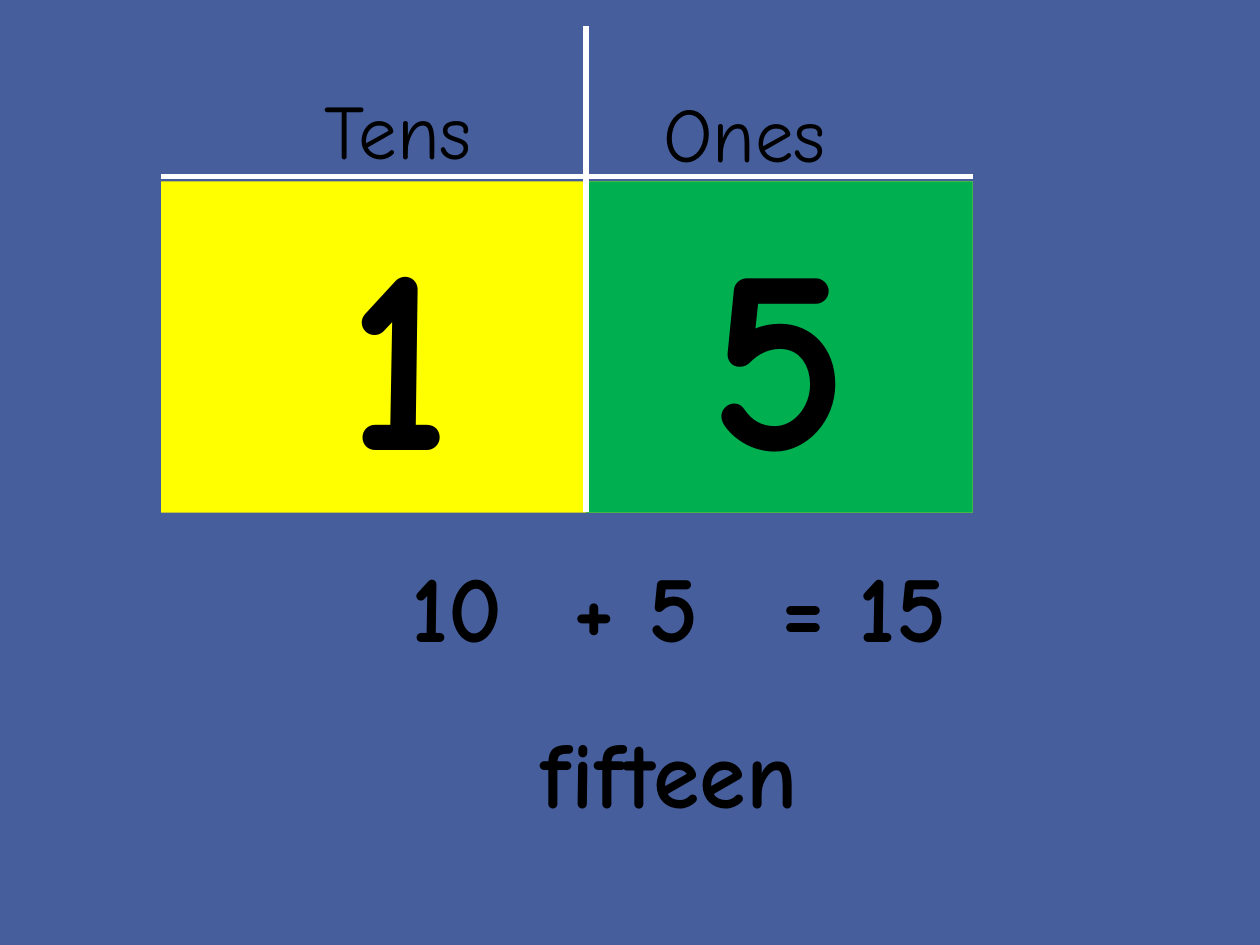
from lxml.etree import SubElement
from pptx import Presentation
from pptx.dml.color import RGBColor
from pptx.enum.shapes import MSO_CONNECTOR, MSO_SHAPE
from pptx.enum.text import MSO_ANCHOR, PP_ALIGN
from pptx.oxml.ns import qn
from pptx.util import Inches, Pt

COLORS = {"background": "465E9C", "tens": "FFFF00", "ones": "00B050",
          "line": "FFFFFF", "text": "000000"}
FONT = "Comic Neue"


def color(name):
    return RGBColor.from_string(COLORS[name])


def write(shape, text, size, bold=True, anchor=MSO_ANCHOR.TOP):
    frame = shape.text_frame
    frame.text = text
    frame.word_wrap = True
    frame.vertical_anchor = anchor
    paragraph = frame.paragraphs[0]
    paragraph.alignment = PP_ALIGN.CENTER
    paragraph.font.name = FONT
    paragraph.font.size = Pt(size)
    paragraph.font.bold = bold
    paragraph.font.color.rgb = color("text")


presentation = Presentation()
presentation.slide_width = Inches(10)
presentation.slide_height = Inches(7.5)
slide = presentation.slides.add_slide(presentation.slide_layouts[5])
slide.background.fill.solid()
slide.background.fill.fore_color.rgb = color("background")

# Place value chart
left, divider, right = 1.28, 4.65, 7.72
card_top, card_height = 1.44, 2.63

# Digit cards: the ones card overlaps the right part of the tens card
for name, digit, card_left, right_inset in [("tens", "1", left, 2.66),
                                            ("ones", "5", divider, 0)]:
    card = slide.shapes.add_shape(
        MSO_SHAPE.RECTANGLE, Inches(card_left), Inches(card_top),
        Inches(right - card_left), Inches(card_height))
    card.shadow.inherit = False
    card.fill.solid()
    card.fill.fore_color.rgb = color(name)
    card.line.fill.background()
    write(card, digit, 150)
    card.text_frame.margin_left = 0
    card.text_frame.margin_right = Inches(right_inset)

# Header rule and column divider
for x1, y1, x2, y2 in [(left, 1.4, right, 1.4), (divider, 0.21, divider, 4.06)]:
    rule = slide.shapes.add_connector(
        MSO_CONNECTOR.STRAIGHT, Inches(x1), Inches(y1), Inches(x2), Inches(y2))
    rule.line.color.rgb = color("line")
    rule.line.width = Pt(3)
    SubElement(rule._element.spPr, qn("a:effectLst"))

# Column headings
title = slide.shapes.title
title.left, title.top = Inches(2.17), Inches(0.4)
title.width, title.height = Inches(1.98), Inches(1.25)
write(title, "Tens", 44, False, MSO_ANCHOR.MIDDLE)
ones_heading = slide.shapes.add_textbox(
    Inches(4.92), Inches(0.42), Inches(1.98), Inches(1.25))
write(ones_heading, "Ones", 44, False, MSO_ANCHOR.MIDDLE)

# Sum and number word
for text, x, y, width in [("10", 2.8, 4.3, 1.65), ("+ 5", 4.22, 4.3, 1.65),
                          ("= 15", 5.63, 4.3, 2.45), ("fifteen", 2.95, 5.62, 4.72)]:
    box = slide.shapes.add_textbox(Inches(x), Inches(y), Inches(width), Inches(1.01))
    write(box, text, 54)

presentation.save("out.pptx")
